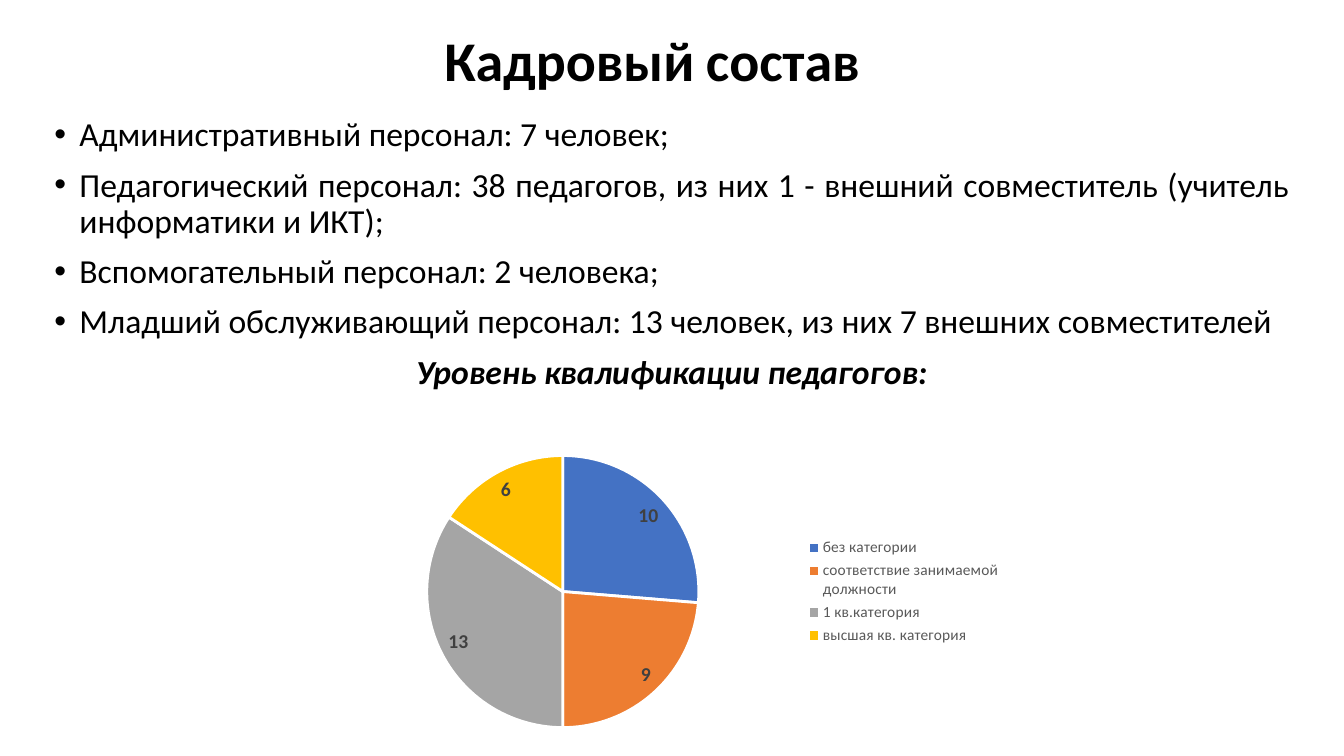
from lxml.etree import SubElement
from pptx import Presentation
from pptx.chart.data import CategoryChartData
from pptx.dml.color import RGBColor
from pptx.enum.chart import XL_CHART_TYPE, XL_LABEL_POSITION, XL_LEGEND_POSITION
from pptx.enum.text import MSO_ANCHOR, PP_ALIGN
from pptx.oxml import parse_xml
from pptx.oxml.ns import nsdecls, qn
from pptx.util import Pt

COLORS = {
    "text": "000000",
    "legend": "595959",
    "label": "404040",
    "border": "FFFFFF",
    "none": "4472C4",
    "fit": "ED7D31",
    "first": "A5A5A5",
    "highest": "FFC000",
}
STAFF = [
    "Административный персонал: 7 человек;",
    "Педагогический персонал: 38 педагогов, из них 1 - внешний совместитель (учитель информатики и ИКТ);",
    "Вспомогательный персонал: 2 человека;",
    "Младший обслуживающий персонал: 13 человек, из них 7 внешних совместителей",
]
LEVELS = [
    ("без категории", 10, "none"),
    ("соответствие занимаемой должности", 9, "fit"),
    ("1 кв.категория", 13, "first"),
    ("высшая кв. категория", 6, "highest"),
]


def rgb(name):
    return RGBColor.from_string(COLORS[name])


class SlideBuilder:
    font_name = "Calibri"

    def __init__(self, slide):
        self.slide = slide

    def style(self, font, color="text", **values):
        for key, value in {"name": self.font_name, **values}.items():
            setattr(font, key, value)
        font.color.rgb = rgb(color)

    def text_box(self, box, anchor=MSO_ANCHOR.TOP):
        tf = self.slide.shapes.add_textbox(*map(Pt, box)).text_frame
        tf.word_wrap = True
        tf.vertical_anchor = anchor
        return tf

    def paragraph(self, tf, runs, first=False, bullet=False, **values):
        p = tf.paragraphs[0] if first else tf.add_paragraph()
        for key, value in {"line_spacing": 0.9, **values}.items():
            setattr(p, key, value)
        for text, font in runs:
            r = p.add_run()
            r.text = text
            self.style(r.font, **font)
        if bullet:
            pPr = p._p.get_or_add_pPr()
            pPr.set("marL", str(Pt(18)))
            pPr.set("indent", str(Pt(-18)))
            SubElement(pPr, qn("a:buFont")).set("typeface", "Arial")
            SubElement(pPr, qn("a:buChar")).set("char", "•")

    def layout(self, x, y, w, h, inner=False):
        target = '<c:layoutTarget val="inner"/>' if inner else ""
        values = "".join(f'<c:{k} val="{v}"/>' for k, v in zip("xywh", (x, y, w, h)))
        return parse_xml(
            f'<c:layout {nsdecls("c")}><c:manualLayout>{target}'
            f'<c:xMode val="edge"/><c:yMode val="edge"/>{values}'
            "</c:manualLayout></c:layout>"
        )

    def pie(self, box, levels):
        data = CategoryChartData()
        data.categories = [name for name, _, _ in levels]
        data.add_series("Педагоги", [value for _, value, _ in levels])
        chart = self.slide.shapes.add_chart(
            XL_CHART_TYPE.PIE, *map(Pt, box), data
        ).chart
        chart.has_title = False
        self.style(chart.font, size=Pt(10))

        plot = chart.plots[0]
        plot.vary_by_categories = True
        for i, (_, _, color) in enumerate(levels):
            fmt = plot.series[0].points[i].format
            fmt.fill.solid()
            fmt.fill.fore_color.rgb = rgb(color)
            fmt.line.color.rgb = rgb("border")
            fmt.line.width = Pt(2)
        plot.has_data_labels = True
        labels = plot.data_labels
        labels.show_value = True
        labels.show_percentage = False
        labels.position = XL_LABEL_POSITION.INSIDE_END
        self.style(labels.font, "label", size=Pt(14), bold=True)

        chart.has_legend = True
        legend = chart.legend
        legend.position = XL_LEGEND_POSITION.RIGHT
        legend.include_in_layout = False
        self.style(legend.font, "legend", size=Pt(11))

        area = chart._chartSpace.chart.plotArea
        for old in area.findall(qn("c:layout")):
            area.remove(old)
        area.insert(0, self.layout(0.15, 0.05, 0.4, 0.9, inner=True))
        for old in legend._element.findall(qn("c:layout")):
            legend._element.remove(old)
        legend._element.find(qn("c:legendPos")).addnext(
            self.layout(0.7, 0.31, 0.29, 0.38)
        )


def main():
    prs = Presentation()
    prs.slide_width, prs.slide_height = Pt(960), Pt(540)
    s = SlideBuilder(prs.slides.add_slide(prs.slide_layouts[6]))

    title = s.text_box((51.8, 9.4, 828, 71.3), MSO_ANCHOR.MIDDLE)
    words = [("Кадровый", 40), (" ", 36), ("состав", 40)]
    runs = [(text, {"size": Pt(size), "bold": True}) for text, size in words]
    s.paragraph(title, runs, first=True, alignment=PP_ALIGN.CENTER)

    body = s.text_box((31.7, 80.6, 896.4, 441.4))
    font = {"size": Pt(24)}
    for i, line in enumerate(STAFF):
        s.paragraph(body, [(line, font)], first=i == 0, bullet=True,
                    alignment=PP_ALIGN.JUSTIFY, space_before=Pt(10))
    heading = ("Уровень квалификации педагогов:", {**font, "bold": True, "italic": True})
    s.paragraph(body, [heading], alignment=PP_ALIGN.CENTER, space_before=Pt(10))

    s.pie((229.7, 314.6, 492.5, 216), LEVELS)
    prs.save("out.pptx")


if __name__ == "__main__":
    main()
